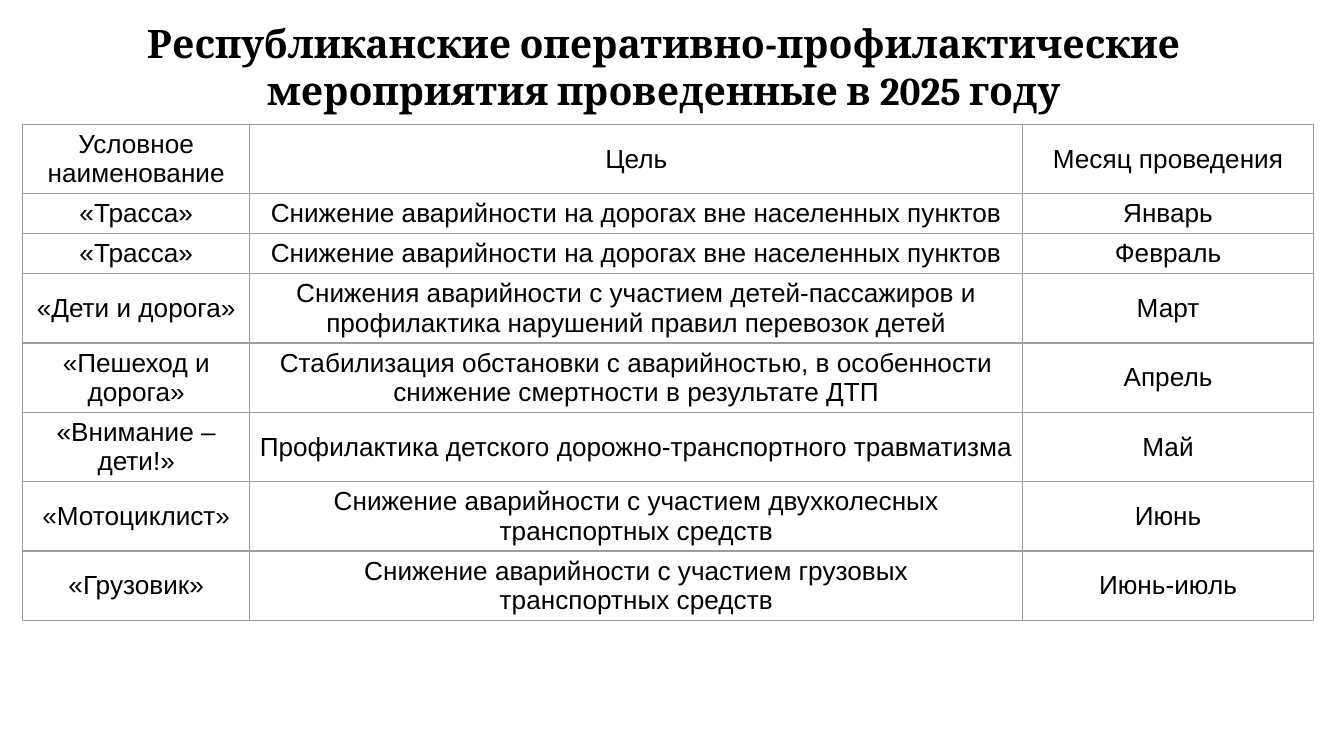
"""Build a slide with a table of the road safety campaigns of 2025."""
from dataclasses import dataclass

import lxml.etree
import pptx
import pptx.dml.color
import pptx.enum.text
import pptx.oxml.ns
import pptx.slide
import pptx.table
import pptx.text.text
import pptx.util

Cm = pptx.util.Cm


@dataclass(frozen=True)
class Theme:
    ink: str = "000000"
    grid: str = "9E9E9E"
    grid_width: float = 0.75
    title_font: str = "Cambria"
    title_size: float = 21
    body_font: str = "Arial"
    body_size: float = 14


@dataclass(frozen=True)
class Campaign:
    name: str
    goal: str
    month: str
    height: float = 1.02


THEME = Theme()
SINGLE_LINE = 0.74
COLUMN_WIDTHS = (4.29, 14.61, 5.49)
ROADS_GOAL = "Снижение аварийности на дорогах вне населенных пунктов"
ROWS = (
    Campaign("Условное наименование", "Цель", "Месяц проведения"),
    Campaign("«Трасса»", ROADS_GOAL, "Январь", SINGLE_LINE),
    Campaign("«Трасса»", ROADS_GOAL, "Февраль", SINGLE_LINE),
    Campaign(
        "«Дети и дорога»",
        "Снижения аварийности с участием детей-пассажиров и профилактика нарушений правил перевозок детей",
        "Март",
    ),
    Campaign(
        "«Пешеход и дорога»",
        "Стабилизация обстановки с аварийностью, в особенности снижение смертности в результате ДТП",
        "Апрель",
    ),
    Campaign("«Внимание – дети!»", "Профилактика детского дорожно-транспортного травматизма", "Май"),
    Campaign("«Мотоциклист»", "Снижение аварийности с участием двухколесных транспортных средств", "Июнь"),
    Campaign("«Грузовик»", "Снижение аварийности с участием грузовых\nтранспортных средств", "Июнь-июль"),
)


def write_text(frame: pptx.text.text.TextFrame, text: str, font: str, size: float, bold: bool = False) -> None:
    """Write centred paragraphs, one for each line of text."""
    frame.word_wrap = True
    for index, line in enumerate(text.split("\n")):
        para = frame.add_paragraph() if index else frame.paragraphs[0]
        para.alignment = pptx.enum.text.PP_ALIGN.CENTER
        span = para.add_run()
        span.text = line
        span.font.name = font
        span.font.size = pptx.util.Pt(size)
        span.font.bold = bold
        span.font.color.rgb = pptx.dml.color.RGBColor.from_string(THEME.ink)


def draw_borders(cell: pptx.table._Cell) -> None:
    """Outline all four sides of a cell."""
    qn = pptx.oxml.ns.qn
    properties = cell._tc.get_or_add_tcPr()
    for side in ("lnL", "lnR", "lnT", "lnB"):
        line = lxml.etree.SubElement(properties, qn(f"a:{side}"), w=str(pptx.util.Pt(THEME.grid_width)))
        fill = lxml.etree.SubElement(line, qn("a:solidFill"))
        lxml.etree.SubElement(fill, qn("a:srgbClr"), val=THEME.grid)


def fill_cell(cell: pptx.table._Cell, text: str) -> None:
    """Style one cell and write its text."""
    cell.margin_left = cell.margin_right = Cm(0.18)
    cell.margin_top = cell.margin_bottom = Cm(0.1)
    cell.vertical_anchor = pptx.enum.text.MSO_ANCHOR.MIDDLE
    draw_borders(cell)
    cell.fill.background()
    write_text(cell.text_frame, text, THEME.body_font, THEME.body_size)


def add_campaign_table(page: pptx.slide.Slide) -> None:
    """Add the table of campaigns."""
    width, height = sum(COLUMN_WIDTHS), sum(row.height for row in ROWS)
    table = page.shapes.add_table(
        len(ROWS), len(COLUMN_WIDTHS), Cm(0.43), Cm(2.35), Cm(width), Cm(height)
    ).table
    table.first_row = table.horz_banding = False
    for column, column_width in zip(table.columns, COLUMN_WIDTHS):
        column.width = Cm(column_width)
    for row, campaign in zip(table.rows, ROWS):
        row.height = Cm(campaign.height)
        for cell, text in zip(row.cells, (campaign.name, campaign.goal, campaign.month)):
            fill_cell(cell, text)


def add_title(page: pptx.slide.Slide) -> None:
    """Add the slide heading."""
    box = page.shapes.add_textbox(Cm(0.25), Cm(0.18), Cm(24.59), Cm(1.93))
    frame = box.text_frame
    frame.margin_left = frame.margin_right = frame.margin_top = frame.margin_bottom = Cm(0.18)
    heading = "Республиканские оперативно-профилактические мероприятия проведенные в 2025 году"
    write_text(frame, heading, THEME.title_font, THEME.title_size, bold=True)


def main() -> None:
    """Create and save the deck."""
    deck = pptx.Presentation()
    deck.slide_width, deck.slide_height = Cm(25.4), Cm(14.29)
    page = deck.slides.add_slide(deck.slide_layouts[6])
    add_campaign_table(page)
    add_title(page)
    deck.save("out.pptx")


if __name__ == "__main__":
    main()
